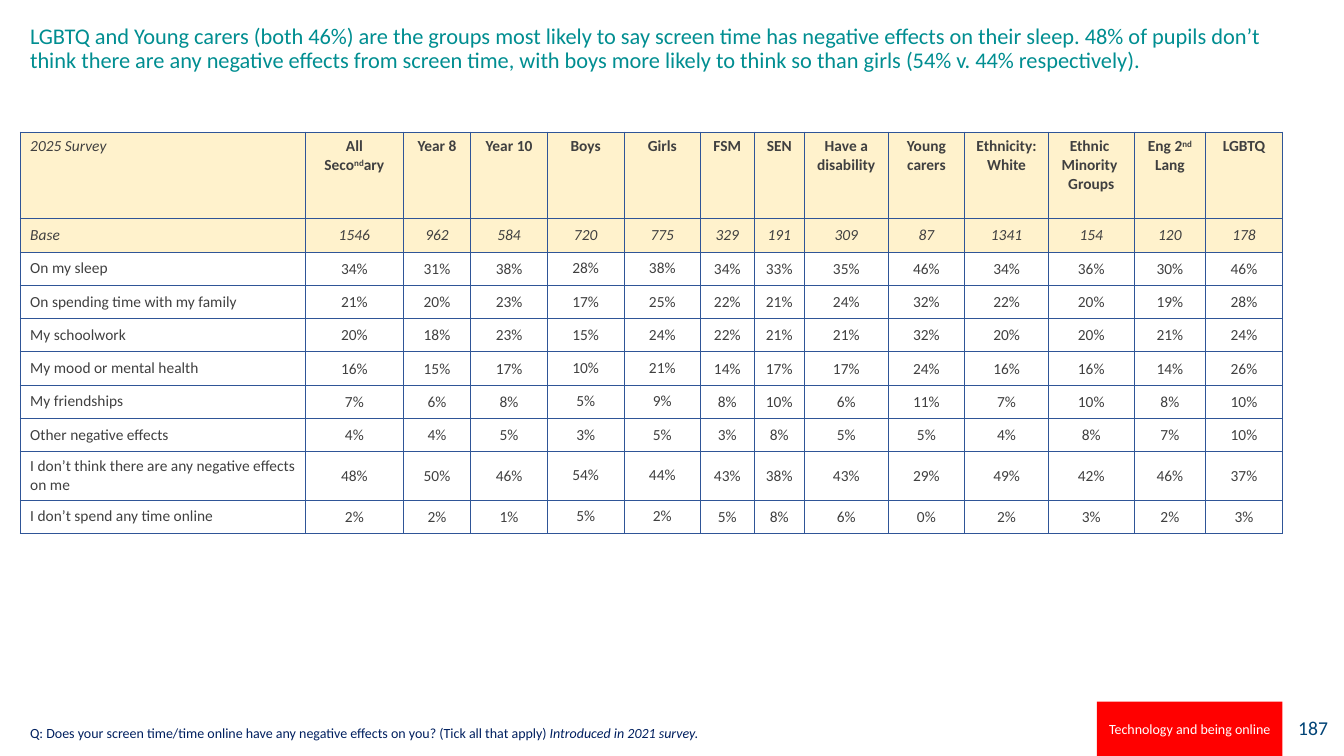
from lxml import etree
from pptx import Presentation
from pptx.dml.color import RGBColor
from pptx.enum.shapes import MSO_SHAPE
from pptx.enum.text import MSO_ANCHOR, PP_ALIGN
from pptx.oxml.ns import qn
from pptx.util import Pt

LEFT, CENTER, RIGHT = PP_ALIGN.LEFT, PP_ALIGN.CENTER, PP_ALIGN.RIGHT
TOP, MIDDLE, BOTTOM = MSO_ANCHOR.TOP, MSO_ANCHOR.MIDDLE, MSO_ANCHOR.BOTTOM
RECTANGLE = MSO_SHAPE.RECTANGLE

# Content
TITLE = ("LGBTQ and Young carers (both 46%) are the groups most likely to say screen time has "
         "negative effects on their sleep. 48% of pupils don’t think there are any negative "
         "effects from screen time, with boys more likely to think so than girls "
         "(54% v. 44% respectively).")
QUESTION = ("Q: Does your screen time/time online have any negative effects on you? "
            "(Tick all that apply) ")
QUESTION_NOTE = "Introduced in 2021 survey."
SECTION = "Technology and being online"
PAGE_NUMBER = "187"
GROUPS = ["2025 Survey", "All Secondary", "Year 8", "Year 10", "Boys", "Girls", "FSM", "SEN",
          "Have a disability", "Young carers", "Ethnicity: White", "Ethnic \nMinority \nGroups",
          "Eng 2nd Lang", "LGBTQ"]
ORDINAL = "nd"
BASES = ("Base", [1546, 962, 584, 720, 775, 329, 191, 309, 87, 1341, 154, 120, 178])
PERCENTAGES = [
    ("On my sleep", [34, 31, 38, 28, 38, 34, 33, 35, 46, 34, 36, 30, 46]),
    ("On spending time with my family", [21, 20, 23, 17, 25, 22, 21, 24, 32, 22, 20, 19, 28]),
    ("My schoolwork", [20, 18, 23, 15, 24, 22, 21, 21, 32, 20, 20, 21, 24]),
    ("My mood or mental health", [16, 15, 17, 10, 21, 14, 17, 17, 24, 16, 16, 14, 26]),
    ("My friendships", [7, 6, 8, 5, 9, 8, 10, 6, 11, 7, 10, 8, 10]),
    ("Other negative effects", [4, 4, 5, 3, 5, 3, 8, 5, 5, 4, 8, 7, 10]),
    ("I don’t think there are any negative effects on me",
     [48, 50, 46, 54, 44, 43, 38, 43, 29, 49, 42, 46, 37]),
    ("I don’t spend any time online", [2, 2, 1, 5, 2, 5, 8, 6, 0, 2, 3, 2, 3]),
]

# Look
THEME = {
    "font": "Calibri",
    "title": (16, "008E91"), "table": (11, "404040"), "section": (10, "FFFFFF"),
    "question": (10, "002060"), "page": (14, "004376"),
    "head_fill": "FFF2CC", "section_fill": "FF0000", "page_fill": "FFFFFF",
    "border": "2F5597", "border_width": 0.5,
}

# Layout, 100 px to the inch
PX = 9144
PAGE_SIZE = (1333, 750)
TITLE_BOX = (20, 20, 1277, 98)
TABLE_BOX = (20, 131, 1252, 398)
QUESTION_BOX = (20, 713, 1119, 27)
SECTION_BOX = (1088, 696, 184, 54)
PAGE_BOX = (1268, 695, 59, 54)
COLUMN_WIDTHS = [283, 97, 67, 76, 76, 76, 53, 50, 83, 76, 83, 85, 71, 76]
HEAD_HEIGHT, ROW_HEIGHT, TWO_LINE_HEIGHT = 86, 33, 48
TWO_LINE_LABEL = 40
PADDED_GROUPS = ("Boys", "Girls")


def scaled(box):
    return [length * PX for length in box]


def color(code):
    return RGBColor.from_string(code)


def style(span, role, bold=False, italic=False):
    size, code = THEME[role]
    span.font.name = THEME["font"]
    span.font.size = Pt(size)
    span.font.color.rgb = color(code)
    span.font.bold = bold
    span.font.italic = italic


def write(frame, text, role, align=LEFT, **emphasis):
    frame.text = text
    for para in frame.paragraphs:
        para.alignment = align
        for span in para.runs:
            style(span, role, **emphasis)


def add_text(page, box, text, role, anchor):
    frame = page.shapes.add_textbox(*scaled(box)).text_frame
    frame.word_wrap = True
    frame.vertical_anchor = anchor
    write(frame, text, role)
    return frame.paragraphs[0]


def add_block(page, box, text, role, fill, align):
    block = page.shapes.add_shape(RECTANGLE, *scaled(box))
    block.shadow.inherit = False
    block.fill.solid()
    block.fill.fore_color.rgb = color(fill)
    block.line.fill.background()
    block.text_frame.word_wrap = True
    block.text_frame.vertical_anchor = MIDDLE
    write(block.text_frame, text, role, align)


def add_borders(cell):
    properties = cell._tc.get_or_add_tcPr()
    for side in ("a:lnL", "a:lnR", "a:lnT", "a:lnB"):
        line = etree.SubElement(properties, qn(side), w=str(Pt(THEME["border_width"])))
        fill = etree.SubElement(line, qn("a:solidFill"))
        etree.SubElement(fill, qn("a:srgbClr"), val=THEME["border"])


def raise_ordinal(para):
    before, after = para.text.split(ORDINAL)
    para.text = before
    for text in (ORDINAL, after):
        para.add_run().text = text
    for span in para.runs:
        style(span, "table", bold=True)
    para.runs[1]._r.get_or_add_rPr().set("baseline", "30000")


def add_results(page):
    rows = [GROUPS, [BASES[0], *map(str, BASES[1])]]
    rows += [[label, *(f"{value}%" for value in values)] for label, values in PERCENTAGES]
    table = page.shapes.add_table(len(rows), len(GROUPS), *scaled(TABLE_BOX)).table
    table.first_row = table.horz_banding = False
    for column, width in zip(table.columns, COLUMN_WIDTHS):
        column.width = width * PX

    for r, texts in enumerate(rows):
        two_lines = len(texts[0]) > TWO_LINE_LABEL
        height = HEAD_HEIGHT if r == 0 else TWO_LINE_HEIGHT if two_lines else ROW_HEIGHT
        table.rows[r].height = height * PX
        for c, text in enumerate(texts):
            cell = table.cell(r, c)
            write(cell.text_frame, text, "table", CENTER if c else LEFT,
                  bold=r == 0 and c > 0, italic=r == 1 or r == c == 0)
            cell.vertical_anchor = MIDDLE if r else TOP
            add_borders(cell)
            if r < 2:
                cell.fill.solid()
                cell.fill.fore_color.rgb = color(THEME["head_fill"])
            else:
                cell.fill.background()
                if c and GROUPS[c] not in PADDED_GROUPS:
                    cell.margin_left = cell.margin_right = cell.margin_top = PX
                    cell.margin_bottom = 0
            if r == 0 and ORDINAL in text:
                raise_ordinal(cell.text_frame.paragraphs[0])


def main():
    deck = Presentation()
    deck.slide_width, deck.slide_height = scaled(PAGE_SIZE)
    page = deck.slides.add_slide(deck.slide_layouts[6])

    # Page number and headline
    add_block(page, PAGE_BOX, PAGE_NUMBER, "page", THEME["page_fill"], RIGHT)
    add_text(page, TITLE_BOX, TITLE, "title", TOP).line_spacing = 0.9

    # Survey results
    add_results(page)

    # Footer
    add_block(page, SECTION_BOX, SECTION, "section", THEME["section_fill"], CENTER)
    question = add_text(page, QUESTION_BOX, QUESTION, "question", BOTTOM)
    note = question.add_run()
    note.text = QUESTION_NOTE
    style(note, "question", italic=True)

    deck.save("out.pptx")


if __name__ == "__main__":
    main()
